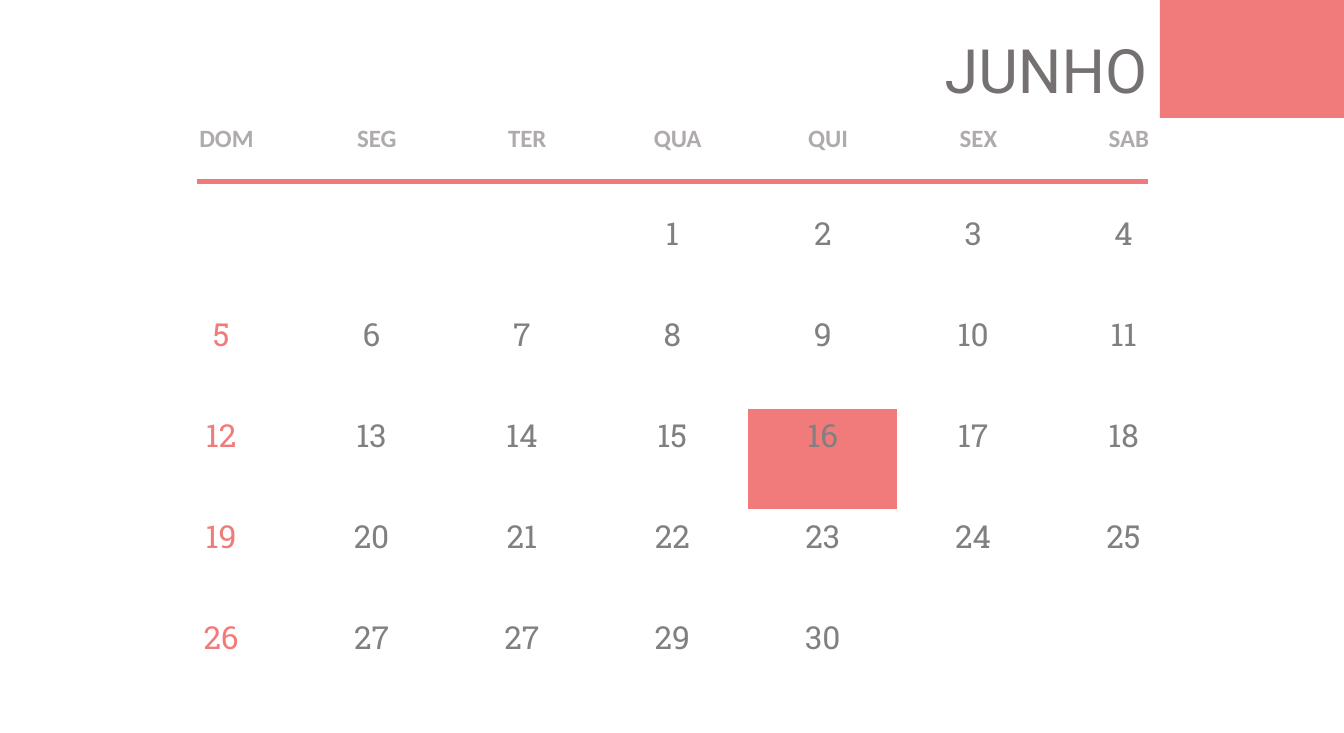
from dataclasses import dataclass

from lxml import etree
from pptx import Presentation
from pptx.dml.color import RGBColor
from pptx.enum.shapes import MSO_CONNECTOR, MSO_SHAPE
from pptx.enum.text import MSO_ANCHOR, MSO_AUTO_SIZE, PP_ALIGN
from pptx.oxml.ns import qn
from pptx.util import Cm, Pt

CENTER, TOP = PP_ALIGN.CENTER, MSO_ANCHOR.TOP
RECT, STRAIGHT = MSO_SHAPE.RECTANGLE, MSO_CONNECTOR.STRAIGHT
FIT_SHAPE = MSO_AUTO_SIZE.SHAPE_TO_FIT_TEXT


@dataclass(frozen=True)
class Style:
    font: str
    size: int
    color: str
    bold: bool = False


@dataclass(frozen=True)
class Theme:
    accent: str = "F17B7B"
    border: str = "FFFFFF"
    border_pt: int = 1
    rule_pt: float = 4.5
    title: Style = Style("Roboto", 54, "767171")
    weekday: Style = Style("Calibri", 22, "AFABAB", True)
    day: Style = Style("Roboto Slab", 28, "808080")
    sunday: Style = Style("Roboto Slab", 28, "F17B7B")


THEME = Theme()
MONTH = "JUNHO"
WEEKDAYS = ["DOM", "SEG", "TER", "QUA", "QUI", "SEX", "SAB"]
FIRST_COLUMN = 3
# The calendar prints 27 twice, in place of 28
DAYS = [*range(1, 28), 27, 29, 30]
MARKED_DAY = 16
WEEKS = 5


def rgb(color):
    return RGBColor.from_string(color)


def add_run(p, text, style):
    r = p.add_run()
    r.text = text
    r.font.name = style.font
    r.font.size = Pt(style.size)
    r.font.bold = style.bold
    r.font.color.rgb = rgb(style.color)


def set_borders(cell):
    tc_pr = cell._tc.get_or_add_tcPr()
    for side in ("lnL", "lnR", "lnT", "lnB"):
        ln = etree.SubElement(tc_pr, qn(f"a:{side}"), w=str(Pt(THEME.border_pt)))
        fill = etree.SubElement(ln, qn("a:solidFill"))
        etree.SubElement(fill, qn("a:srgbClr"), val=THEME.border)


def format_cell(cell, insets, fill=None):
    (cell.margin_left, cell.margin_top,
     cell.margin_right, cell.margin_bottom) = [Cm(v) for v in insets]
    cell.vertical_anchor = TOP
    set_borders(cell)
    if fill:
        cell.fill.solid()
        cell.fill.fore_color.rgb = rgb(fill)
    else:
        cell.fill.background()


def write_cell(cell, text, style):
    p = cell.text_frame.paragraphs[0]
    p.alignment = CENTER
    add_run(p, text, style)


def add_calendar(s):
    columns, head_h, week_h, col_w = len(WEEKDAYS), 2.77, 3.15, 4.69
    table = s.shapes.add_table(
        WEEKS + 1, columns, Cm(4.55), Cm(3.68),
        Cm(columns * col_w), Cm(head_h + WEEKS * week_h)).table
    table.first_row = table.horz_banding = False
    for col in table.columns:
        col.width = Cm(col_w)
    for i, row in enumerate(table.rows):
        row.height = Cm(week_h if i else head_h)

    # Weekday names
    for col, name in enumerate(WEEKDAYS):
        cell = table.cell(0, col)
        format_cell(cell, (0.33, 0.18, 0, 0.18))
        write_cell(cell, name, THEME.weekday)

    # Days, counted from the first weekday of the month
    for slot in range(WEEKS * columns):
        week, col = divmod(slot, columns)
        index = slot - FIRST_COLUMN
        day = DAYS[index] if 0 <= index < len(DAYS) else None
        cell = table.cell(week + 1, col)
        format_cell(cell, (0.36, 0.16, 0.36, 0.16),
                    THEME.accent if day == MARKED_DAY else None)
        if day:
            write_cell(cell, str(day), THEME.day if col else THEME.sunday)


def add_title(s, text, x, y, w, h):
    tf = s.shapes.add_textbox(Cm(x), Cm(y), Cm(w), Cm(h)).text_frame
    tf.word_wrap = False
    tf.auto_size = FIT_SHAPE
    add_run(tf.paragraphs[0], text, THEME.title)


def add_rule(s, x1, x2, y):
    line = s.shapes.add_connector(STRAIGHT, Cm(x1), Cm(y), Cm(x2), Cm(y))
    line.line.color.rgb = rgb(THEME.accent)
    line.line.width = Pt(THEME.rule_pt)
    etree.SubElement(line._element.spPr, qn("a:effectLst"))


def add_block(s, x, y, w, h):
    sp = s.shapes.add_shape(RECT, Cm(x), Cm(y), Cm(w), Cm(h))
    sp.shadow.inherit = False
    sp.fill.solid()
    sp.fill.fore_color.rgb = rgb(THEME.accent)
    sp.line.fill.background()


def main():
    prs = Presentation()
    prs.slide_width, prs.slide_height = Cm(41.91), Cm(22.86)
    s = prs.slides.add_slide(prs.slide_layouts[6])

    # Month grid
    add_calendar(s)

    # Month name, rule under the weekdays, corner block
    add_title(s, MONTH, 29.21, 0.89, 6.91, 2.57)
    add_rule(s, 6.15, 35.79, 5.66)
    add_block(s, 36.17, 0, 5.74, 3.68)

    prs.save("out.pptx")


if __name__ == "__main__":
    main()
